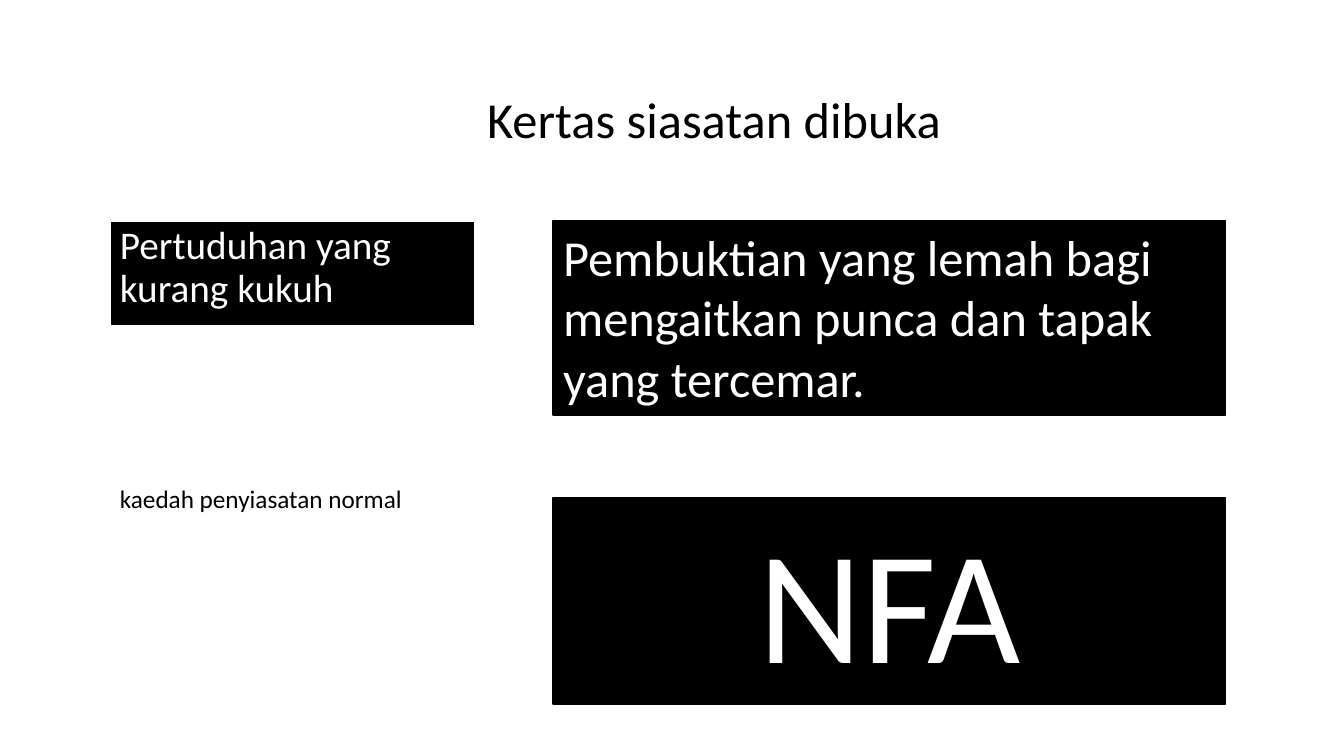
from pptx import Presentation
from pptx import util as u
from pptx.dml.color import RGBColor
from pptx.enum import shapes, text

PX = 914400 / 100.8  # EMU per px
COLORS = {"black": "000000", "white": "FFFFFF"}
LEFT, RIGHT, TOP = 110, 553, 221  # column edges and top of first row
RIGHT_W = 672
L, C = text.PP_ALIGN.LEFT, text.PP_ALIGN.CENTER
UP, MID = text.MSO_ANCHOR.TOP, text.MSO_ANCHOR.MIDDLE

# Content: text, (x, y, w, h), fill, line, line pt, font pt, font colour, align, anchor, spacing
BOXES = [
    ("Pertuduhan yang kurang kukuh", (LEFT, TOP, 365, 105),
     "black", "white", 1.5, 28, "white", L, UP, 0.9),
    ("Kertas siasatan dibuka", (224, 49, 980, 146),
     None, "white", 0.75, 36, "black", C, MID, 0.9),
    ("Pembuktian yang lemah bagi mengaitkan punca dan tapak yang tercemar.",
     (RIGHT, TOP, RIGHT_W, 194), "black", "black", 1, 36, "white", L, UP, 1.0),
    ("NFA", (RIGHT, 498, RIGHT_W, 206),
     "black", "black", 1, 115, "white", C, UP, 1.0),
]
NOTE = ("kaedah penyiasatan normal", (LEFT, 478, 305, 40))


def emu(box):
    return [round(v * PX) for v in box]


def rgb(name):
    return RGBColor.from_string(COLORS[name])


def write(s, words, size, color, align=L, anchor=UP, spacing=1.0, wrap=True):
    tf = s.text_frame
    tf.word_wrap = wrap
    tf.vertical_anchor = anchor
    p = tf.paragraphs[0]
    p.text = words
    p.alignment = align
    p.line_spacing = spacing
    p.font.name = "Calibri"
    p.font.size = u.Pt(size)
    p.font.color.rgb = rgb(color)


prs = Presentation()
prs.slide_width, prs.slide_height = u.Inches(13.33), u.Inches(7.5)
sp = prs.slides.add_slide(prs.slide_layouts[6]).shapes

# Heading and filled boxes
for words, box, fill, line, width, size, color, align, anchor, spacing in BOXES:
    s = sp.add_shape(shapes.MSO_SHAPE.RECTANGLE, *emu(box))
    s.shadow.inherit = False
    if fill:
        s.fill.solid()
        s.fill.fore_color.rgb = rgb(fill)
    else:
        s.fill.background()
    s.line.color.rgb = rgb(line)
    s.line.width = u.Pt(width)
    write(s, words, size, color, align, anchor, spacing)

# Plain label
words, box = NOTE
write(sp.add_textbox(*emu(box)), words, 18, "black", wrap=False)

prs.save("out.pptx")
